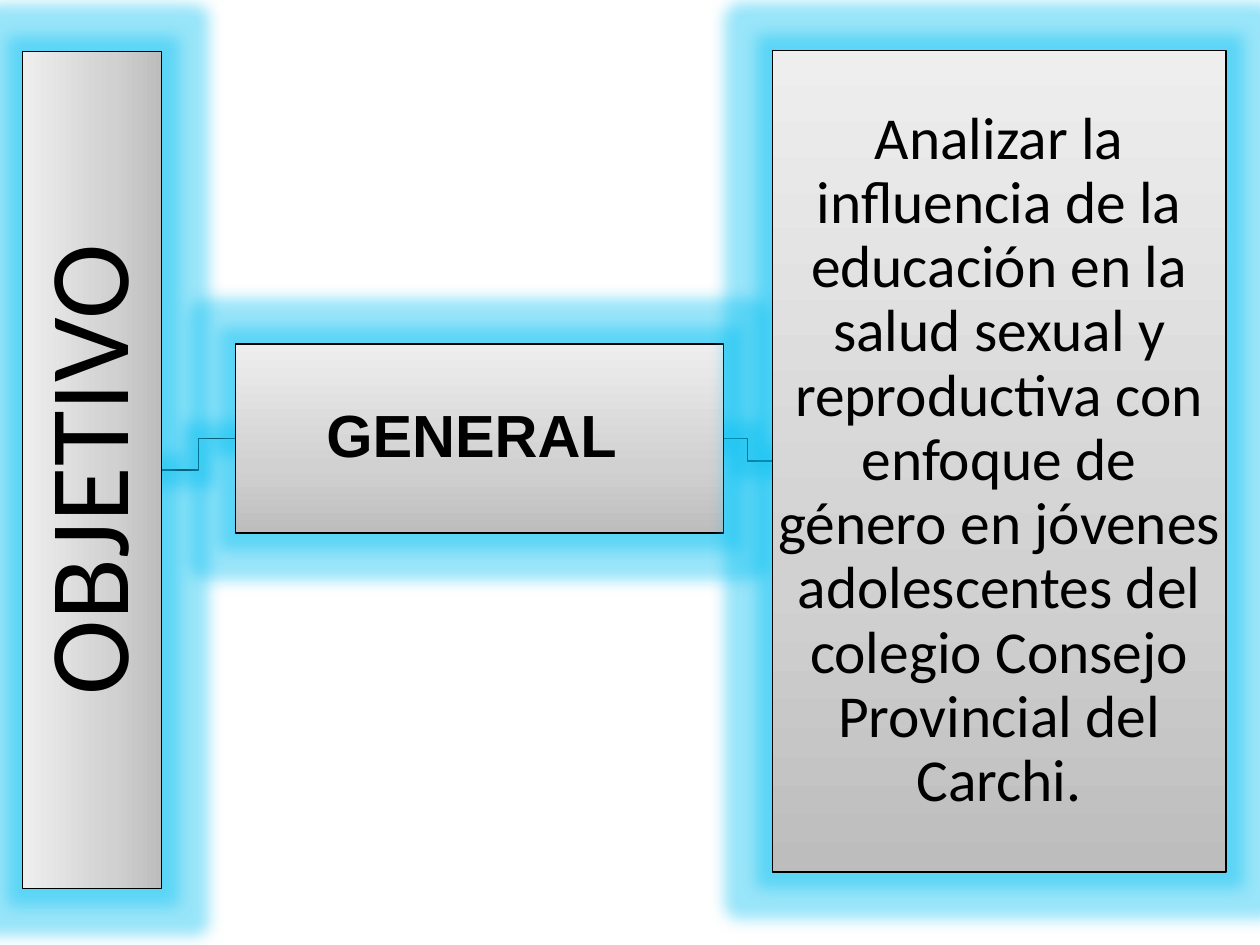
"""Build the general objective slide: three glowing boxes joined by elbow connectors."""
from copy import deepcopy

from pptx import Presentation
from pptx.dml.color import RGBColor
from pptx.enum.shapes import MSO_CONNECTOR, MSO_SHAPE
from pptx.enum.text import MSO_ANCHOR, PP_ALIGN
from pptx.oxml import parse_xml
from pptx.oxml.ns import nsdecls, qn
from pptx.util import Inches, Pt

BLACK = RGBColor(0x00, 0x00, 0x00)
GLOW = RGBColor(0x00, 0xBE, 0xF2)
GRADIENT = [
    (0, RGBColor(0xBD, 0xBD, 0xBD)),
    (0.35, RGBColor(0xD1, 0xD1, 0xD1)),
    (1, RGBColor(0xEE, 0xEE, 0xEE)),
]
BOXES = [
    ("OBJETIVO", -2.59, 3.18, 6.64, 1.1, 270, 0.05, "Calibri", 65, False),
    ("GENERAL ", 1.87, 2.73, 3.87, 1.5, 0, 0.02, "Arial", 34, True),
    (
        "Analizar la influencia de la educación en la salud sexual y "
        "reproductiva con enfoque de género en jóvenes adolescentes del "
        "colegio Consejo Provincial del Carchi.",
        6.13, 0.4, 3.6, 6.52, 0, 0.02, "Calibri", 34, False,
    ),
]


def add_outline_and_glow(shape):
    shape.line.color.rgb = BLACK
    shape.line.width = Pt(0.75)
    shape._element.spPr.append(parse_xml(
        f'<a:effectLst {nsdecls("a")}><a:glow rad="{Inches(0.25)}">'
        f'<a:srgbClr val="{GLOW}"><a:alpha val="40000"/></a:srgbClr>'
        '</a:glow></a:effectLst>'
    ))


presentation = Presentation()
presentation.slide_width = Inches(10)
presentation.slide_height = Inches(7.5)
slide = presentation.slides.add_slide(presentation.slide_layouts[6])

connectors = []
for _ in range(2):
    connector = slide.shapes.add_connector(MSO_CONNECTOR.ELBOW, 0, 0, 0, 0)
    add_outline_and_glow(connector)
    connectors.append(connector)

boxes = []
for text, left, top, width, height, rotation, margin, font, size, bold in BOXES:
    box = slide.shapes.add_shape(
        MSO_SHAPE.RECTANGLE, Inches(left), Inches(top), Inches(width), Inches(height)
    )
    box.rotation = rotation
    box.fill.gradient()
    box.fill.gradient_angle = 90
    stop_list = box._element.spPr.find(qn("a:gradFill")).find(qn("a:gsLst"))
    stop_list.insert(1, deepcopy(stop_list[0]))
    for stop, (position, color) in zip(box.fill.gradient_stops, GRADIENT):
        stop.position = position
        stop.color.rgb = color
    add_outline_and_glow(box)

    text_frame = box.text_frame
    text_frame.text = text
    text_frame.word_wrap = True
    text_frame.vertical_anchor = MSO_ANCHOR.MIDDLE
    text_frame.margin_left = text_frame.margin_right = Inches(margin)
    text_frame.margin_top = text_frame.margin_bottom = Inches(margin)
    paragraph = text_frame.paragraphs[0]
    paragraph.alignment = PP_ALIGN.CENTER
    paragraph.line_spacing = 0.9
    run = paragraph.runs[0]
    run.font.name = font
    run.font.size = Pt(size)
    run.font.bold = bold
    run.font.color.rgb = BLACK
    boxes.append(box)

objective, general, statement = boxes
objective_link, general_link = connectors
objective_link.begin_connect(objective, 2)
objective_link.begin_x = Inches(1.28)
objective_link.begin_y = Inches(3.73)
objective_link.end_connect(general, 1)
general_link.begin_connect(general, 3)
general_link.end_connect(statement, 1)

presentation.save("out.pptx")
